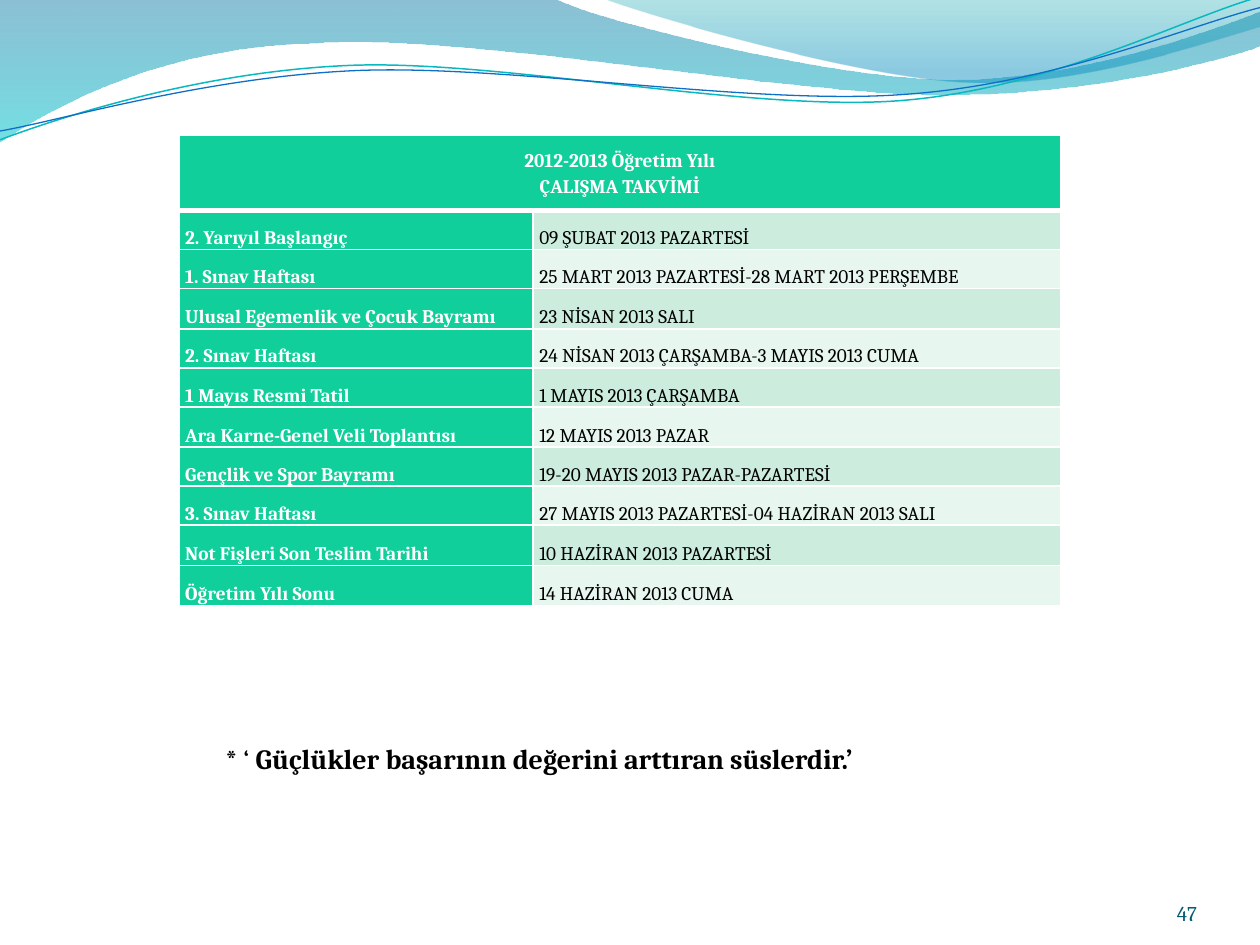
import math
from dataclasses import dataclass

from lxml import etree
from pptx import Presentation
from pptx.dml.color import RGBColor
from pptx.enum.text import MSO_ANCHOR, PP_ALIGN
from pptx.oxml.ns import qn
from pptx.util import Inches, Pt

FONT = "Cambria"
WHITE, BLACK, GREEN = "FFFFFF", "000000", "10CF9B"
BANDS = ("CCEDDE", "E7F6EF")
LEFT, CENTER, RIGHT = PP_ALIGN.LEFT, PP_ALIGN.CENTER, PP_ALIGN.RIGHT
MIDDLE, BOTTOM = MSO_ANCHOR.MIDDLE, MSO_ANCHOR.BOTTOM


@dataclass
class Stop:
    position: float
    color: str
    opacity: int


@dataclass
class Wave:
    """Segments hold one point (straight) or three points (cubic curve)."""
    box: tuple
    start: tuple
    segments: list
    stops: tuple = ()
    line: str = ""
    width: float = 0
    rotation: float = 0


WAVES = [
    Wave((-0.01, -0.01, 10.02, 1.14), (0, 0), [
        (4.4, -0.01),
        (4.76, 0.17, 6.64, 0.63, 7.58, 0.63),
        (8.53, 0.63, 9.58, 0.26, 10, 0.09),
        (10.01, 0.36),
        (9.83, 0.44, 8.7, 0.76, 7.46, 0.75),
        (6.22, 0.75, 3.82, 0.28, 2.57, 0.34),
        (1.29, 0.36, 0.46, 0.83, -0.01, 1.13),
        (0, 0),
    ], stops=(Stop(0, "0074A1", 45), Stop(1, "00C6CF", 55))),
    Wave((4.79, -0.01, 5.21, 0.7), (4.79, -0.01), [
        (5.09, 0.11, 6.82, 0.62, 7.69, 0.65),
        (8.56, 0.69, 9.61, 0.32, 10, 0.21),
        (10, 0),
        (4.79, -0.01),
    ], stops=(Stop(0, "00A1A9", 30), Stop(0.8, "008BBF", 45))),
    Wave((-0.02, 0.22, 10.02, 0.71), (0, 1.11), [
        (0.48, 0.93, 1.58, 0.57, 2.77, 0.52),
        (3.95, 0.47, 5.93, 0.89, 7.13, 0.8),
        (8.33, 0.71, 9.38, 0.15, 9.98, -0.02),
    ], line="0AB8BF", width=0.85, rotation=357.3),
    Wave((-0.02, 0.3, 10.03, 0.58), (0, 1.04), [
        (0.47, 0.96, 1.64, 0.61, 2.83, 0.56),
        (4.03, 0.51, 5.97, 0.84, 7.17, 0.75),
        (8.36, 0.67, 9.41, 0.21, 10, 0.06),
    ], line="0F6FC6", width=0.75, rotation=357.3),
]

TITLE = ("2012-2013 Öğretim Yılı", "ÇALIŞMA TAKVİMİ")
CALENDAR = [
    ("2. Yarıyıl Başlangıç", "09 ŞUBAT 2013 PAZARTESİ"),
    ("1. Sınav Haftası", "25 MART 2013 PAZARTESİ-28 MART 2013 PERŞEMBE"),
    ("Ulusal Egemenlik ve Çocuk Bayramı", "23 NİSAN 2013 SALI"),
    ("2. Sınav Haftası", "24 NİSAN 2013 ÇARŞAMBA-3 MAYIS 2013 CUMA"),
    ("1 Mayıs Resmi Tatil", "1 MAYIS 2013 ÇARŞAMBA"),
    ("Ara Karne-Genel Veli Toplantısı", "12 MAYIS 2013 PAZAR"),
    ("Gençlik ve Spor Bayramı", "19-20 MAYIS 2013 PAZAR-PAZARTESİ"),
    ("3. Sınav Haftası", "27 MAYIS 2013 PAZARTESİ-04 HAZİRAN 2013 SALI"),
    ("Not Fişleri Son Teslim Tarihi", "10 HAZİRAN 2013 PAZARTESİ"),
    ("Öğretim Yılı Sonu", "14 HAZİRAN 2013 CUMA"),
]
COL_WIDTHS = (2.81, 4.19)
ROW_HEIGHTS = (0.6, 0.31, 0.31, 0.32, 0.31, 0.31, 0.32, 0.31, 0.31, 0.32, 0.32)


def rgb(color: str) -> RGBColor:
    return RGBColor.from_string(color)


def add_run(p, text: str, size: float, color: str, bold: bool = False) -> None:
    r = p.add_run()
    r.text = text
    r.font.name, r.font.size, r.font.bold = FONT, Pt(size), bold
    r.font.color.rgb = rgb(color)


def to_local(wave: Wave, x: float, y: float) -> tuple:
    """Turn a slide point into EMU inside the wave's unrotated box."""
    left, top, width, height = wave.box
    dx, dy = x - left - width / 2, y - top - height / 2
    angle = math.radians(-wave.rotation)
    return (Inches(dx * math.cos(angle) - dy * math.sin(angle) + width / 2),
            Inches(dx * math.sin(angle) + dy * math.cos(angle) + height / 2))


def set_curves(sp, wave: Wave) -> None:
    """Give the freeform its box and its true cubic segments."""
    sp.left, sp.top, sp.width, sp.height = map(Inches, wave.box)
    sp.rotation = wave.rotation
    outline = next(sp._element.spPr.iter(qn("a:path")))
    for child in list(outline):
        outline.remove(child)
    outline.set("w", str(sp.width))
    outline.set("h", str(sp.height))
    tags = {2: "a:lnTo", 6: "a:cubicBezTo"}
    steps = [("a:moveTo", wave.start)]
    steps += [(tags[len(seg)], seg) for seg in wave.segments]
    for tag, coords in steps:
        step = etree.SubElement(outline, qn(tag))
        for x, y in zip(coords[::2], coords[1::2]):
            px, py = to_local(wave, x, y)
            etree.SubElement(step, qn("a:pt"), x=str(px), y=str(py))
    if wave.stops:
        etree.SubElement(outline, qn("a:close"))


def add_wave(slide, wave: Wave) -> None:
    builder = slide.shapes.build_freeform(*map(Inches, wave.start))
    builder.add_line_segments([tuple(map(Inches, seg[-2:])) for seg in wave.segments],
                              close=False)
    sp = builder.convert_to_shape()
    set_curves(sp, wave)
    sp.shadow.inherit = False
    if not wave.stops:
        sp.fill.background()
        sp.line.color.rgb = rgb(wave.line)
        sp.line.width = Pt(wave.width)
        return
    sp.line.fill.background()
    sp.fill.gradient()
    sp.fill.gradient_angle = 270
    for stop, target in zip(wave.stops, sp.fill.gradient_stops):
        target.position = stop.position
        target.color.rgb = rgb(stop.color)
    for stop, clr in zip(wave.stops, sp._element.spPr.iter(qn("a:srgbClr"))):
        etree.SubElement(clr, qn("a:alpha"), val=str(stop.opacity * 1000))


def set_borders(cell, bottom: float = 1) -> None:
    tcPr = cell._tc.get_or_add_tcPr()
    for side, width in (("L", 1), ("R", 1), ("T", 1), ("B", bottom)):
        ln = etree.SubElement(tcPr, qn(f"a:ln{side}"), w=str(Pt(width)))
        fill = etree.SubElement(ln, qn("a:solidFill"))
        etree.SubElement(fill, qn("a:srgbClr"), val=WHITE)


def format_cell(cell, lines: tuple, fill: str, color: str, bold: bool,
                align=LEFT, anchor=BOTTOM, bottom: float = 1) -> None:
    set_borders(cell, bottom)
    cell.fill.solid()
    cell.fill.fore_color.rgb = rgb(fill)
    cell.margin_left = cell.margin_right = Inches(0.05)
    cell.margin_top = cell.margin_bottom = 0
    cell.vertical_anchor = anchor
    p = cell.text_frame.paragraphs[0]
    p.alignment, p.line_spacing = align, 1.15
    for i, text in enumerate(lines):
        if i:
            p.add_line_break()
        add_run(p, text, 11, color, bold)


def add_calendar(slide) -> None:
    table = slide.shapes.add_table(
        len(ROW_HEIGHTS), len(COL_WIDTHS), Inches(1.42), Inches(1.07),
        Inches(sum(COL_WIDTHS)), Inches(sum(ROW_HEIGHTS))).table
    for col, width in zip(table.columns, COL_WIDTHS):
        col.width = Inches(width)
    for row, height in zip(table.rows, ROW_HEIGHTS):
        row.height = Inches(height)
    title = table.cell(0, 0)
    title.merge(table.cell(0, 1))
    format_cell(title, TITLE, GREEN, WHITE, True, CENTER, MIDDLE, bottom=3)
    for i, (event, date) in enumerate(CALENDAR):
        format_cell(table.cell(i + 1, 0), (event,), GREEN, WHITE, True)
        format_cell(table.cell(i + 1, 1), (date,), BANDS[i % 2], BLACK, False)


def add_text_box(slide, left: float, top: float, width: float, height: float):
    """Add a bottom-anchored text box and return its text frame."""
    tf = slide.shapes.add_textbox(*map(Inches, (left, top, width, height))).text_frame
    tf.word_wrap = True
    tf.vertical_anchor = BOTTOM
    return tf


def main() -> None:
    prs = Presentation()
    prs.slide_width, prs.slide_height = Inches(10), Inches(7.5)
    slide = prs.slides.add_slide(prs.slide_layouts[6])
    for wave in WAVES:
        add_wave(slide, wave)
    add_calendar(slide)
    p = add_text_box(slide, 1.69, 5.56, 6.46, 0.64).paragraphs[0]
    add_run(p, "* ‘ ", 16, BLACK)
    add_run(p, "Güçlükler başarının değerini arttıran süslerdir.’", 16, BLACK, True)
    tf = add_text_box(slide, 8.67, 6.95, 0.83, 0.4)
    tf.margin_left = tf.margin_right = tf.margin_top = tf.margin_bottom = 0
    tf.paragraphs[0].alignment = RIGHT
    add_run(tf.paragraphs[0], "47", 12, "045D75")
    prs.save("out.pptx")


if __name__ == "__main__":
    main()
